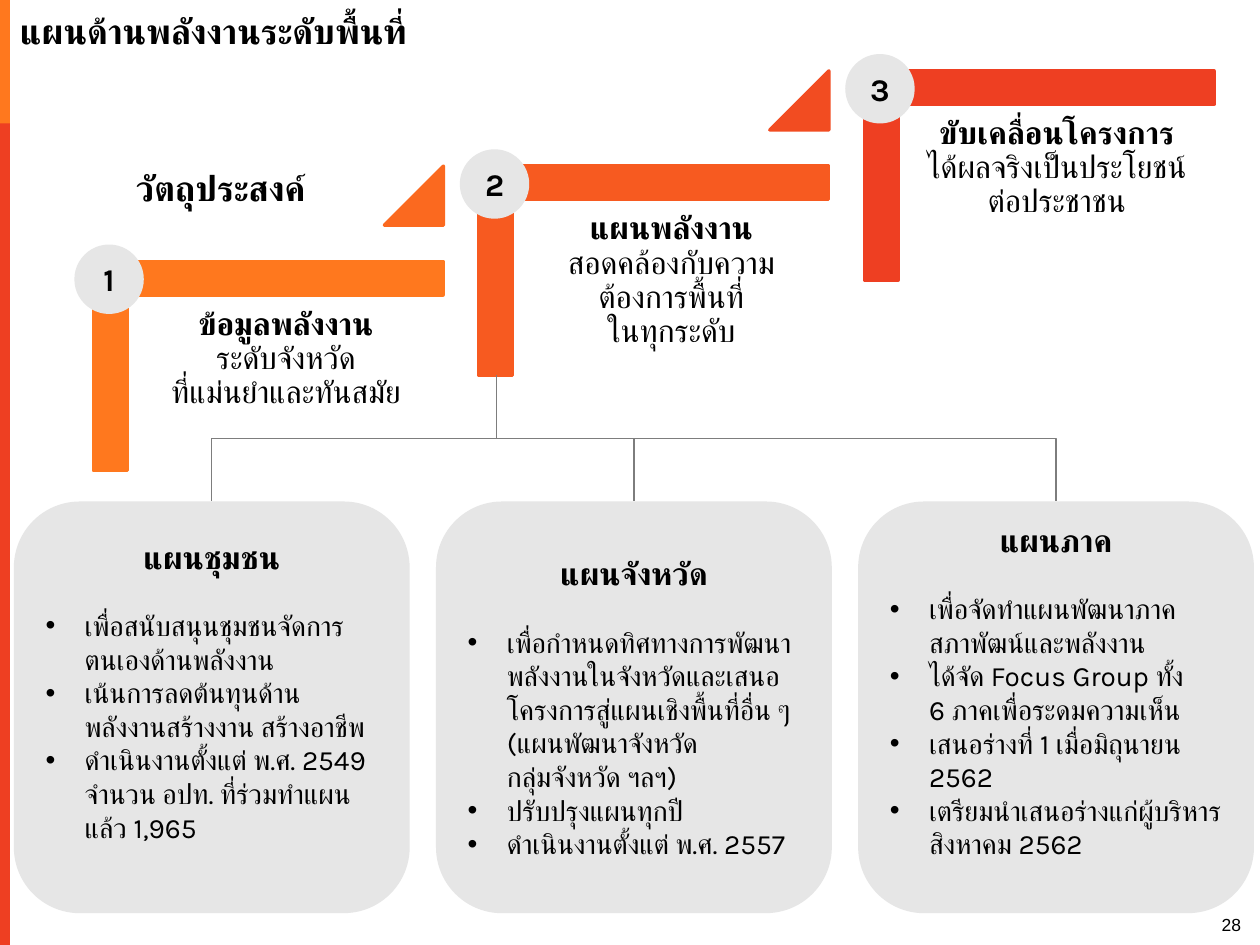
from lxml.etree import SubElement
from pptx import Presentation
from pptx.dml.color import RGBColor
from pptx.enum.shapes import MSO_CONNECTOR as Connector, MSO_SHAPE as Shape
from pptx.enum.text import MSO_ANCHOR as Anchor, MSO_AUTO_SIZE as AutoSize, PP_ALIGN as Align
from pptx.oxml.ns import qn
from pptx.util import Cm, Pt

GREY = "E6E6E6"


def set_font(paragraph, size, bold=False, name="Karla"):
    """Format a paragraph, naming the font for Latin and Thai letters alike."""
    font = paragraph.font
    font.name, font.size, font.bold = name, Pt(size), bold
    font.color.rgb = RGBColor.from_string("000000")
    SubElement(font._element, qn("a:cs"), typeface=name)


def add_filled(kind, left, top, width, height, color, line_width=0):
    shape = slide.shapes.add_shape(kind, Cm(left), Cm(top), Cm(width), Cm(height))
    shape.shadow.inherit = False
    shape.fill.solid()
    shape.fill.fore_color.rgb = RGBColor.from_string(color)
    if line_width:
        shape.line.color.rgb = RGBColor.from_string(color)
        shape.line.width = Pt(line_width)
    else:
        shape.line.fill.background()
    return shape


presentation = Presentation()
presentation.slide_width, presentation.slide_height = Cm(25.4), Cm(19.05)
slide = presentation.slides.add_slide(presentation.slide_layouts[5])

# Side bar
add_filled(Shape.RECTANGLE, 0, 0, 0.2, 12.5, "FF781E")
add_filled(Shape.RECTANGLE, 0, 2.49, 0.2, 16.56, "EE3F22")

# Title
title = slide.shapes.title
title.left, title.top, title.width, title.height = Cm(0), Cm(0), Cm(25.4), Cm(1.22)
frame = title.text_frame
frame.text = "แผนด้านพลังงานระดับพื้นที่"
frame.auto_size = AutoSize.NONE
frame.vertical_anchor = Anchor.MIDDLE
frame.margin_left = Cm(0.4)
frame.paragraphs[0].alignment = Align.LEFT
set_font(frame.paragraphs[0], 20, bold=True)

# Objective heading and page number
heading = slide.shapes.add_textbox(Cm(2.49), Cm(3.23), Cm(4.39), Cm(1.12))
heading.text_frame.word_wrap = False
heading.text_frame.text = "วัตถุประสงค์"
set_font(heading.text_frame.paragraphs[0], 20, bold=True)

page_number = slide.shapes.add_textbox(Cm(24.59), Cm(18.42), Cm(0.43), Cm(0.43))
frame = page_number.text_frame
frame.word_wrap = False
frame.vertical_anchor = Anchor.BOTTOM
frame.margin_left = frame.margin_right = frame.margin_top = frame.margin_bottom = 0
frame.text = "28"
frame.paragraphs[0].alignment = Align.RIGHT
set_font(frame.paragraphs[0], 10, name="Arial")

# Three rising steps: step color, color of the triangle leading to the next, text, text height
steps = [
    ("FF781E", "FB691F", "ข้อมูลพลังงาน\vระดับจังหวัด\vที่แม่นยำและทันสมัย", 2.54),
    ("F75A20", "F24C21", "แผนพลังงาน\vสอดคล้องกับความต้องการพื้นที่\vในทุกระดับ", 3.4),
    ("EE3F22", None, "ขับเคลื่อนโครงการ\vได้ผลจริงเป็นประโยชน์\vต่อประชาชน", 3.15),
]
for index, (color, triangle_color, text, text_height) in enumerate(steps):
    left, top = 3.3 + 7.77 * index, 3.86 - 1.92 * index
    corner = add_filled(Shape.CORNER, left, top, 4.22, 7.04, color, 2)
    corner.rotation = 90
    corner.adjustments[0] = corner.adjustments[1] = 0.16

    if triangle_color:
        triangle = add_filled(Shape.ISOSCELES_TRIANGLE, left + 4.45, top - 0.51, 1.19, 1.19,
                              triangle_color, 2)
        triangle.adjustments[0] = 1

    box = slide.shapes.add_textbox(Cm(left - 0.71), Cm(top + 2.1), Cm(6.35), Cm(text_height))
    frame = box.text_frame
    frame.word_wrap = True
    frame.margin_left = frame.margin_right = frame.margin_top = frame.margin_bottom = Cm(0.25)
    paragraph = frame.paragraphs[0]
    paragraph.text = text
    paragraph.alignment = Align.CENTER
    paragraph.line_spacing = 0.9
    set_font(paragraph, 18)
    paragraph.runs[0].font.bold = True

    circle = add_filled(Shape.OVAL, left - 1.8, top + 1.07, 1.4, 1.4, GREY)
    circle.text_frame.text = str(index + 1)
    circle.text_frame.vertical_anchor = Anchor.MIDDLE
    circle.text_frame.paragraphs[0].alignment = Align.CENTER
    set_font(circle.text_frame.paragraphs[0], 18, bold=True)

# Plan cards, each joined to step 2: heading, bottom margin, bullets
cards = [
    ("แผนชุมชน", 0.8, [
        "เพื่อสนับสนุนชุมชนจัดการตนเองด้านพลังงาน",
        "เน้นการลดต้นทุนด้านพลังงานสร้างงาน สร้างอาชีพ",
        "ดำเนินงานตั้งแต่ พ.ศ. 2549 จำนวน อปท. ที่ร่วมทำแผนแล้ว 1,965",
    ]),
    ("แผนจังหวัด", 0.13, [
        "เพื่อกำหนดทิศทางการพัฒนาพลังงานในจังหวัดและเสนอโครงการสู่แผนเชิงพื้นที่อื่น ๆ "
        "(แผนพัฒนาจังหวัด\vกลุ่มจังหวัด ฯลฯ)",
        "ปรับปรุงแผนทุกปี",
        "ดำเนินงานตั้งแต่ พ.ศ. 2557",
    ]),
    ("แผนภาค", 0.8, [
        "เพื่อจัดทำแผนพัฒนาภาคสภาพัฒน์และพลังงาน",
        "ได้จัด Focus Group ทั้ง\v6 ภาคเพื่อระดมความเห็น",
        "เสนอร่างที่ 1 เมื่อมิถุนายน 2562",
        "เตรียมนำเสนอร่างแก่ผู้บริหาร สิงหาคม 2562",
    ]),
]
card_width, card_top = 7.98, 10.11
trunk_x, trunk_top = 10.01, 7.57
drop = card_top - trunk_top
for index, (name, bottom_margin, bullets) in enumerate(cards):
    left = 0.28 + 8.51 * index
    card = add_filled(Shape.ROUNDED_RECTANGLE, left, card_top, card_width, 8.3, GREY)
    frame = card.text_frame
    frame.word_wrap = True
    frame.vertical_anchor = Anchor.MIDDLE
    frame.margin_bottom = Cm(bottom_margin)
    paragraph = frame.paragraphs[0]
    paragraph.text = name
    paragraph.alignment = Align.CENTER
    paragraph.space_after = Pt(19)
    set_font(paragraph, 18, bold=True)
    for bullet in bullets:
        paragraph = frame.add_paragraph()
        paragraph.text = bullet
        paragraph.alignment = Align.LEFT
        properties = paragraph._p.get_or_add_pPr()
        properties.set("marL", str(Cm(0.79)))
        properties.set("indent", str(-Cm(0.79)))
        SubElement(properties, qn("a:buFont"), typeface="Arial")
        SubElement(properties, qn("a:buChar"), char="•")
        set_font(paragraph, 16)

    # An elbow runs sideways first, so it is laid out flat and turned to run downwards
    card_x = left + card_width / 2
    span = abs(card_x - trunk_x)
    flat_left = (card_x + trunk_x - drop) / 2
    flat_top = (trunk_top + card_top - span) / 2
    elbow = slide.shapes.add_connector(Connector.ELBOW, Cm(flat_left), Cm(flat_top),
                                       Cm(flat_left + drop), Cm(flat_top + span))
    elbow.line.color.rgb = RGBColor.from_string("7D7D7D")
    elbow.line.width = Pt(0.75)
    transform = elbow._element.spPr.find(qn("a:xfrm"))
    if card_x < trunk_x:
        transform.set("rot", str(90 * 60000))
    else:
        transform.set("rot", str(270 * 60000))
        transform.set("flipH", "1")
    SubElement(elbow._element.spPr, qn("a:effectLst"))

presentation.save("out.pptx")
